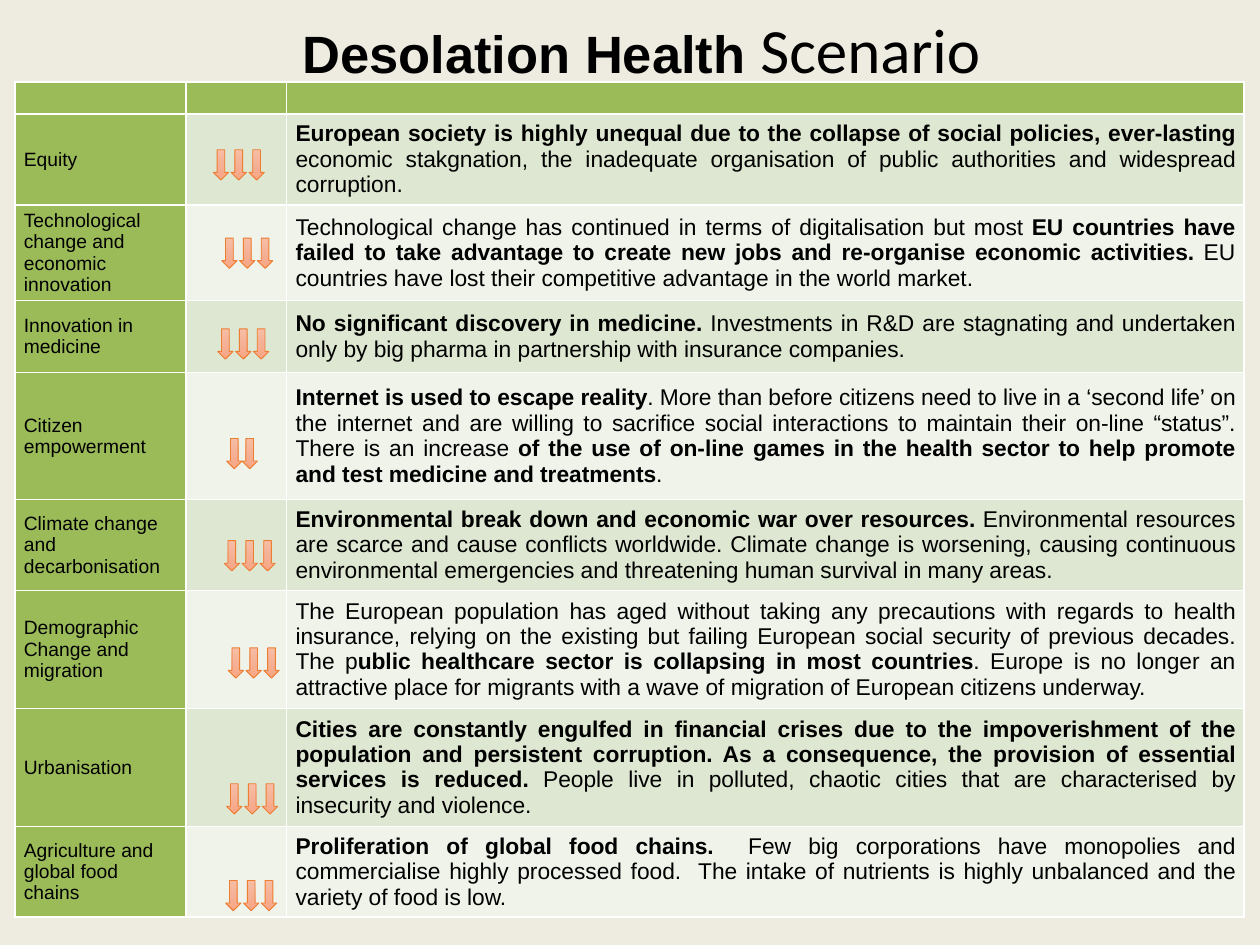
from copy import deepcopy

from lxml.etree import SubElement
from pptx import Presentation
from pptx.dml.color import RGBColor
from pptx.enum.shapes import MSO_SHAPE
from pptx.enum.text import MSO_ANCHOR, PP_ALIGN
from pptx.oxml.ns import qn
from pptx.util import Cm, Pt

GREEN, BANDS = "9BBB59", ("DEE7D1", "EFF3EA")
WIDTHS = (3.45, 2.03, 19.3)
HEAD = 0.65

# Topic, row height, arrows (left, top, count, pitch), text with *bold* parts
ROWS = [
    ("Equity", 1.83, (4.3, 3.02, 3, 0.36),
     "*European society is highly unequal due to the collapse of social policies, ever-lasting* "
     "economic stakgnation, the inadequate organisation of public authorities and widespread "
     "corruption."),
    ("Technological change and economic innovation", 1.93, (4.47, 4.8, 3, 0.36),
     "Technological change has continued in terms of digitalisation but most *EU countries have "
     "failed to take advantage to create new jobs and re-organise economic activities. *EU "
     "countries have lost their competitive advantage in the world market."),
    ("Innovation in medicine", 1.45, (4.39, 6.63, 3, 0.36),
     "*No significant discovery in medicine. *Investments in R&D are stagnating and undertaken "
     "only by big pharma in partnership with insurance companies."),
    ("Citizen empowerment", 2.56, (4.57, 8.84, 2, 0.31),
     "*Internet is used to escape reality*. More than before citizens need to live in a ‘second "
     "life’ on the internet and are willing to sacrifice social interactions to maintain their "
     "on-line “status”. There is an increase *of the use of on-line games in the health sector "
     "to help promote and test medicine and treatments*."),
    ("Climate change and decarbonisation", 1.83, (4.52, 10.9, 3, 0.36),
     "*Environmental break down and economic war over resources.* Environmental resources are "
     "scarce and cause conflicts worldwide. Climate change is worsening, causing continuous "
     "environmental emergencies and threatening human survival in many areas."),
    ("Demographic Change and migration", 2.38, (4.6, 13.06, 3, 0.36),
     "The European population has aged without taking any precautions with regards to health "
     "insurance, relying on the existing but failing European social security of previous "
     "decades. The p*ublic healthcare sector is collapsing in most countries*. Europe is no "
     "longer an attractive place for migrants with a wave of migration of European citizens "
     "underway."),
    ("Urbanisation", 2.38, (4.57, 15.8, 3, 0.36),
     "*Cities are constantly engulfed in financial crises due to the impoverishment of the "
     "population and persistent corruption. As a consequence, the provision of essential "
     "services is reduced. *People live in polluted, chaotic cities that are characterised by "
     "insecurity and violence."),
    ("Agriculture and global food chains", 1.83, (4.55, 17.75, 3, 0.36),
     "*Proliferation of global food chains.*  Few big corporations have monopolies and "
     "commercialise highly processed food.  The intake of nutrients is highly unbalanced and "
     "the variety of food is low."),
]


def tint(code):
    return RGBColor.from_string(code)


class Deck:
    font, ink, edge = "Arial", "000000", "FFFFFF"
    glow, rim = ("F7BDA5", "F5B196", "F8A582"), "ED7D31"

    def __init__(self):
        self.file = Presentation()
        self.file.slide_width, self.file.slide_height = Cm(25.4), Cm(19.05)
        self.slide = self.file.slides.add_slide(self.file.slide_layouts[5])
        back = self.slide.background.fill
        back.solid()
        back.fore_color.rgb = tint("EEECE1")

    def title(self, parts):
        box = self.slide.shapes.title
        box.left, box.top, box.width, box.height = Cm(1.5), Cm(0), Cm(22.86), Cm(1.96)
        box.text_frame.vertical_anchor = MSO_ANCHOR.MIDDLE
        para = box.text_frame.paragraphs[0]
        para.alignment = PP_ALIGN.CENTER
        for text, font, size, bold in parts:
            run = para.add_run()
            run.text = text
            run.font.name, run.font.size, run.font.bold = font, Pt(size), bold
            run.font.color.rgb = tint(self.ink)

    def grid(self, left, top, widths, highs):
        table = self.slide.shapes.add_table(
            len(highs), len(widths), Cm(left), Cm(top), Cm(sum(widths)), Cm(sum(highs))).table
        table.first_row = table.horz_banding = False
        for col, width in zip(table.columns, widths):
            col.width = Cm(width)
        for row, high in zip(table.rows, highs):
            row.height = Cm(high)
        return table

    def cell(self, cell, fill, text="", size=10, align=PP_ALIGN.LEFT):
        cell.margin_left = cell.margin_right = Cm(0.18)
        cell.margin_top = cell.margin_bottom = Cm(0.1)
        cell.vertical_anchor = MSO_ANCHOR.MIDDLE
        # Borders come before the fill in the cell's XML
        props = cell._tc.get_or_add_tcPr()
        for side in ("lnL", "lnR", "lnT", "lnB"):
            line = SubElement(props, qn("a:" + side), w=str(Pt(1)))
            SubElement(SubElement(line, qn("a:solidFill")), qn("a:srgbClr"), val=self.edge)
        cell.fill.solid()
        cell.fill.fore_color.rgb = tint(fill)
        para = cell.text_frame.paragraphs[0]
        para.alignment = align
        para.font.name, para.font.size = self.font, Pt(size)
        para.font.color.rgb = tint(self.ink)
        for spot, part in enumerate(text.split("*")):
            if part:
                run = para.add_run()
                run.text, run.font.bold = part, spot % 2 == 1
        if not text:  # keeps an empty cell from growing
            SubElement(para._p, qn("a:endParaRPr"), sz=str(size * 100))

    def arrow(self, left, top):
        shape = self.slide.shapes.add_shape(
            MSO_SHAPE.DOWN_ARROW, Cm(left), Cm(top), Cm(0.31), Cm(0.61))
        shape.shadow.inherit = False
        shape.line.color.rgb, shape.line.width = tint(self.rim), Pt(0.5)
        shape.fill.gradient()
        shape.fill.gradient_angle = 270
        # The preset gradient has two stops; add a third
        stops = shape._element.spPr.find(qn("a:gradFill")).find(qn("a:gsLst"))
        stops.append(deepcopy(stops[0]))
        for spot, (stop, code) in enumerate(zip(shape.fill.gradient_stops, self.glow)):
            stop.position, stop.color.rgb = spot / 2, tint(code)


def main():
    deck = Deck()
    deck.title([("Desolation Health ", "Arial", 30, True), ("Scenario", "Calibri", 36, False)])

    # Table: header band, then one row per topic
    table = deck.grid(0.3, 1.65, WIDTHS, [HEAD] + [row[1] for row in ROWS])
    for col in range(len(WIDTHS)):
        deck.cell(table.cell(0, col), GREEN)
    for num, (topic, _, _, text) in enumerate(ROWS, 1):
        band = BANDS[(num - 1) % 2]
        deck.cell(table.cell(num, 0), GREEN, topic, 11)
        deck.cell(table.cell(num, 1), band)
        deck.cell(table.cell(num, 2), band, text, 13, PP_ALIGN.JUSTIFY)

    # Trend arrows
    for _, _, (left, top, count, pitch), _ in ROWS:
        for step in range(count):
            deck.arrow(left + step * pitch, top)

    deck.file.save("out.pptx")


if __name__ == "__main__":
    main()
